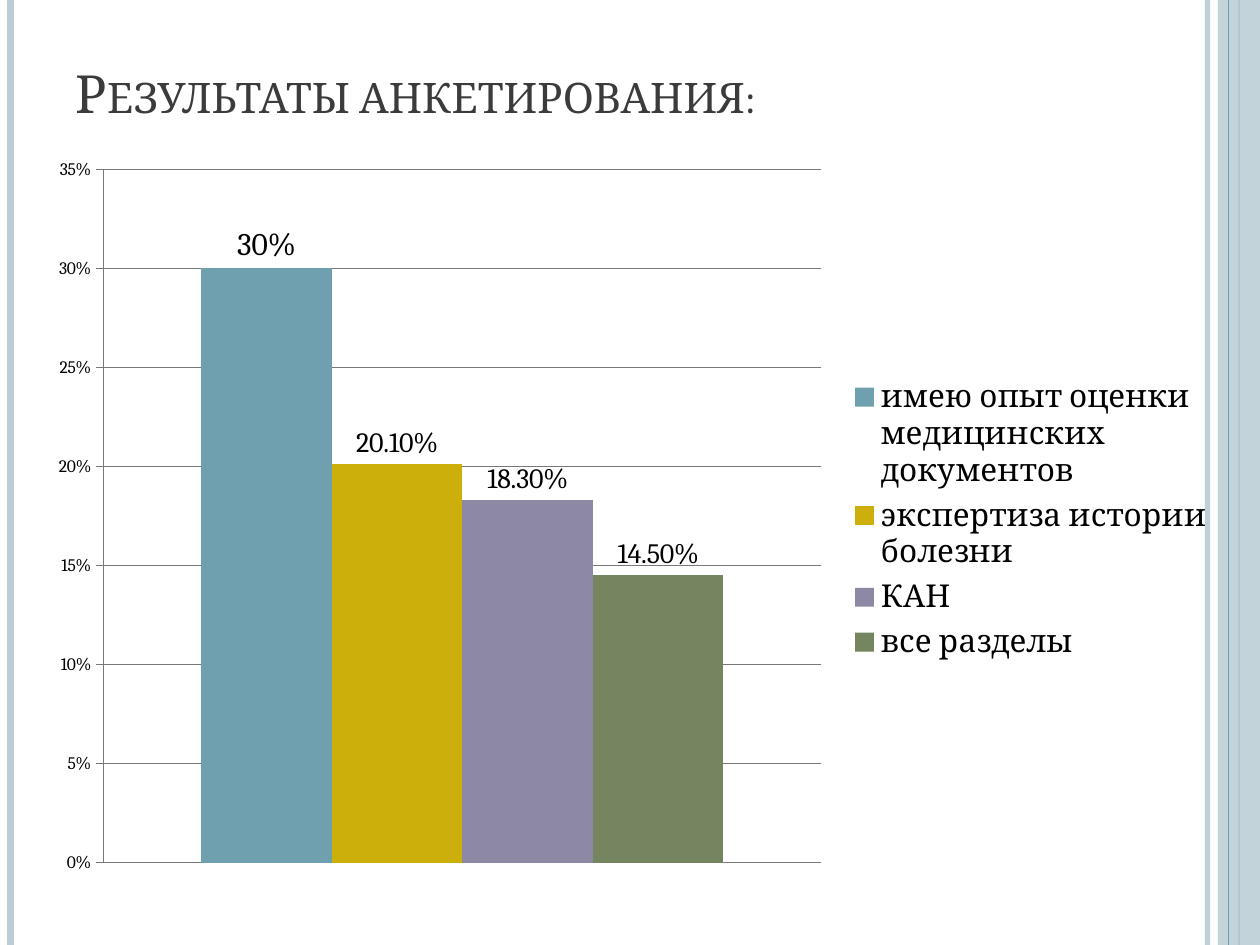
from lxml.etree import SubElement
from pptx import Presentation
from pptx.chart.data import CategoryChartData
from pptx.dml.color import RGBColor
from pptx.enum.chart import (XL_CHART_TYPE, XL_LABEL_POSITION,
                             XL_LEGEND_POSITION, XL_TICK_MARK)
from pptx.enum.shapes import MSO_CONNECTOR, MSO_SHAPE
from pptx.enum.text import MSO_ANCHOR
from pptx.oxml import parse_xml
from pptx.oxml.ns import nsdecls, qn
from pptx.util import Pt


def rgb(code):
    return RGBColor.from_string(code)


def layout(x, y, w, h, inner=False):
    """Return a manual chart layout, in fractions of the chart's size."""
    target = '<c:layoutTarget val="inner"/>' if inner else ''
    return parse_xml(
        f'<c:layout {nsdecls("c")}><c:manualLayout>{target}'
        '<c:xMode val="edge"/><c:yMode val="edge"/>'
        f'<c:x val="{x}"/><c:y val="{y}"/><c:w val="{w}"/><c:h val="{h}"/>'
        '</c:manualLayout></c:layout>')


FONT = "Cambria"
WIDE, HIGH = 720, 540

prs = Presentation()
prs.slide_width, prs.slide_height = Pt(WIDE), Pt(HIGH)
slide = prs.slides.add_slide(prs.slide_layouts[6])
shapes = slide.shapes

# Side stripes: the band covers the first three lines, the last lies on it
stripes = [(690, "BACDD4", 3, 93), (6, "BACDD4", 4.5, 100),
           (708, "6EA0B0", 1.5, 100), None, (702, "6EA0B0", 0.75, 100)]
for stripe in stripes:
    if stripe is None:
        band = shapes.add_shape(MSO_SHAPE.RECTANGLE, Pt(696), Pt(0),
                                Pt(24), Pt(HIGH))
        band.shadow.inherit = False
        band.fill.solid()
        band.fill.fore_color.rgb = rgb("BACDD4")
        band.line.fill.background()
        part, alpha = band, 87
    else:
        x, color, width, alpha = stripe
        part = shapes.add_connector(MSO_CONNECTOR.STRAIGHT,
                                    Pt(x), Pt(0), Pt(x), Pt(HIGH))
        part.line.color.rgb = rgb(color)
        part.line.width = Pt(width)
        SubElement(part._element.spPr, qn("a:effectLst"))
    if alpha < 100:
        tint = next(part._element.spPr.iter(qn("a:srgbClr")))
        SubElement(tint, qn("a:alpha")).set("val", str(alpha * 1000))

# Title
title = shapes.add_textbox(Pt(36), Pt(12), Pt(648), Pt(62.5))
frame = title.text_frame
frame.word_wrap = True
frame.vertical_anchor = MSO_ANCHOR.BOTTOM
run = frame.paragraphs[0].add_run()
run.text = "Результаты анкетирования:"
run.font.name = FONT
run.font.size = Pt(30)
run.font.color.rgb = rgb("3B3B3B")
run._r.get_or_add_rPr().set("cap", "small")

# Survey chart
answers = [
    ("имею опыт оценки медицинских документов", 0.3, "6EA0B0", 18, "0%"),
    ("экспертиза истории болезни", 0.201, "CCAF0A", 16, "0.00%"),
    ("КАН", 0.183, "8D89A4", 16, "0.00%"),
    ("все разделы", 0.145, "748560", 16, "0.00%"),
]
data = CategoryChartData()
data.categories = ["1"]
for name, value, *_ in answers:
    data.add_series(name, [value])
chart = shapes.add_chart(XL_CHART_TYPE.COLUMN_CLUSTERED, Pt(18), Pt(84),
                         Pt(684), Pt(426), data).chart
chart.has_title = False
chart.font.name = FONT
chart.font.size = Pt(10)
chart.font.color.rgb = rgb("000000")

plot = chart.plots[0]
plot.vary_by_categories = False
plot.gap_width = 150
plot.overlap = 0
for bar, (_, _, color, size, form) in zip(plot.series, answers):
    bar.format.fill.solid()
    bar.format.fill.fore_color.rgb = rgb(color)
    tags = bar.data_labels
    tags.show_value = True
    tags.position = XL_LABEL_POSITION.OUTSIDE_END
    tags.number_format = form
    tags.number_format_is_linked = False
    tags.font.name = FONT
    tags.font.size = Pt(size)
    tags.font.color.rgb = rgb("000000")

chart.category_axis.visible = False
axis = chart.value_axis
axis.minimum_scale, axis.maximum_scale, axis.major_unit = 0, 0.35, 0.05
axis.major_tick_mark = XL_TICK_MARK.OUTSIDE
axis.tick_labels.number_format = "0%"
axis.tick_labels.number_format_is_linked = False
axis.has_major_gridlines = True
for rule in (axis.format.line, axis.major_gridlines.format.line):
    rule.color.rgb = rgb("787878")
    rule.width = Pt(0.75)

chart.has_legend = True
legend = chart.legend
legend.position = XL_LEGEND_POSITION.RIGHT
legend.include_in_layout = False
legend.font.name = FONT
legend.font.size = Pt(18)
legend.font.color.rgb = rgb("000000")

# Fixed places for the plot and the legend
area = chart._chartSpace.chart.plotArea
for root in (area, legend._element):
    for old in root.findall(qn("c:layout")):
        root.remove(old)
area.insert(0, layout(0.06, 0.03, 0.6, 0.93, inner=True))
legend._element.find(qn("c:legendPos")).addnext(
    layout(0.68, 0.3, 0.31, 0.4))

prs.save("out.pptx")
